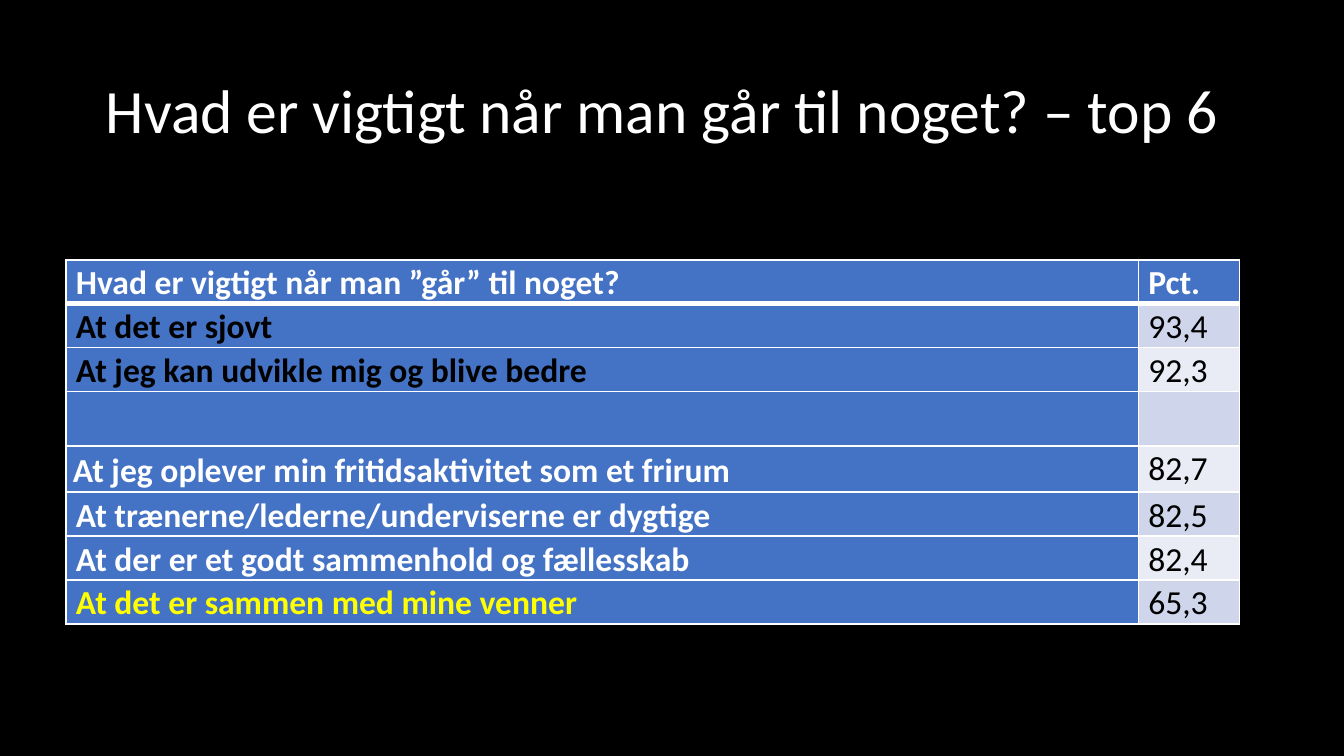
from lxml import etree
from pptx import Presentation
from pptx.dml.color import RGBColor
from pptx.enum.text import MSO_ANCHOR, MSO_AUTO_SIZE, PP_ALIGN
from pptx.oxml.ns import qn
from pptx.util import Pt

BLACK = RGBColor(0x00, 0x00, 0x00)
WHITE = RGBColor(0xFF, 0xFF, 0xFF)
YELLOW = RGBColor(0xFF, 0xFF, 0x00)
BLUE = RGBColor(0x44, 0x72, 0xC4)
BANDS = [RGBColor(0xE9, 0xEB, 0xF5), RGBColor(0xCF, 0xD5, 0xEA)]
FONT = "Calibri"

HEADING = "Hvad er vigtigt når man går til noget? – top 6"
ANSWERS = [
    ("Hvad er vigtigt når man ”går” til noget?", "Pct.", WHITE),
    ("At det er sjovt", "93,4", BLACK),
    ("At jeg kan udvikle mig og blive bedre", "92,3", BLACK),
    ("", "", BLACK),
    ("At jeg oplever min fritidsaktivitet som et frirum", "82,7", WHITE),
    ("At trænerne/lederne/underviserne er dygtige", "82,5", WHITE),
    ("At der er et godt sammenhold og fællesskab", "82,4", WHITE),
    ("At det er sammen med mine venner", "65,3", YELLOW),
]
GAP_ROW, FREE_SPACE_ROW = 3, 4
BOTTOM_ROWS = {1, 4, 5, 6}
COLUMN_WIDTHS = [574.5, 54]
ROW_HEIGHT = 23.5
SPECIAL_HEIGHTS = {GAP_ROW: 29.2, FREE_SPACE_ROW: 24.7}


def add_borders(cell, top, bottom):
    properties = cell._tc.get_or_add_tcPr()
    for side, width in (("L", 1), ("R", 1), ("T", top), ("B", bottom)):
        line = etree.SubElement(properties, qn(f"a:ln{side}"), w=str(Pt(width)))
        fill = etree.SubElement(line, qn("a:solidFill"))
        etree.SubElement(fill, qn("a:srgbClr"), val=str(WHITE))


def format_cell(cell, content, color, bold, fill, inset_x, inset_y):
    cell.margin_left = cell.margin_right = Pt(inset_x)
    cell.margin_top = cell.margin_bottom = Pt(inset_y)
    cell.fill.solid()
    cell.fill.fore_color.rgb = fill
    cell.text = content
    paragraph = cell.text_frame.paragraphs[0]
    if content:
        paragraph.line_spacing = 1.07
    paragraph.font.name = FONT
    paragraph.font.size = Pt(18)
    paragraph.font.bold = bold
    paragraph.font.color.rgb = color


deck = Presentation()
deck.slide_width, deck.slide_height = Pt(720), Pt(405)
slide = deck.slides.add_slide(deck.slide_layouts[5])
slide.background.fill.solid()
slide.background.fill.fore_color.rgb = BLACK

title = slide.shapes.title
title.left, title.top, title.width, title.height = Pt(49.5), Pt(21.6), Pt(621), Pt(78.3)
title.text_frame.text = HEADING
title.text_frame.auto_size = MSO_AUTO_SIZE.NONE
title.text_frame.vertical_anchor = MSO_ANCHOR.MIDDLE
heading = title.text_frame.paragraphs[0]
heading.alignment = PP_ALIGN.LEFT
heading.line_spacing = 0.9
heading.font.name = FONT
heading.font.size = Pt(33)
heading.font.color.rgb = WHITE

heights = [SPECIAL_HEIGHTS.get(row, ROW_HEIGHT) for row in range(len(ANSWERS))]
ranking = slide.shapes.add_table(
    len(ANSWERS), len(COLUMN_WIDTHS), Pt(35.5), Pt(139.2),
    Pt(sum(COLUMN_WIDTHS)), Pt(sum(heights))).table
ranking.horz_banding = False
for column, width in zip(ranking.columns, COLUMN_WIDTHS):
    column.width = Pt(width)

for row, (answer, percent, color) in enumerate(ANSWERS):
    ranking.rows[row].height = Pt(heights[row])
    is_header = row == 0
    answer_cell, percent_cell = ranking.rows[row].cells
    for cell in (answer_cell, percent_cell):
        add_borders(cell, 3 if row == 1 else 1, 3 if is_header else 1)
    inset_y = 3.6 if row == GAP_ROW else 0
    answer_inset = (3.6, 0.6) if row == FREE_SPACE_ROW else (5.2, inset_y)
    format_cell(answer_cell, answer, color, True, BLUE, *answer_inset)
    format_cell(percent_cell, percent, WHITE if is_header else BLACK, is_header,
                BLUE if is_header else BANDS[row % 2], 5.2, inset_y)
    if row in BOTTOM_ROWS:
        answer_cell.vertical_anchor = MSO_ANCHOR.BOTTOM

deck.save("out.pptx")
